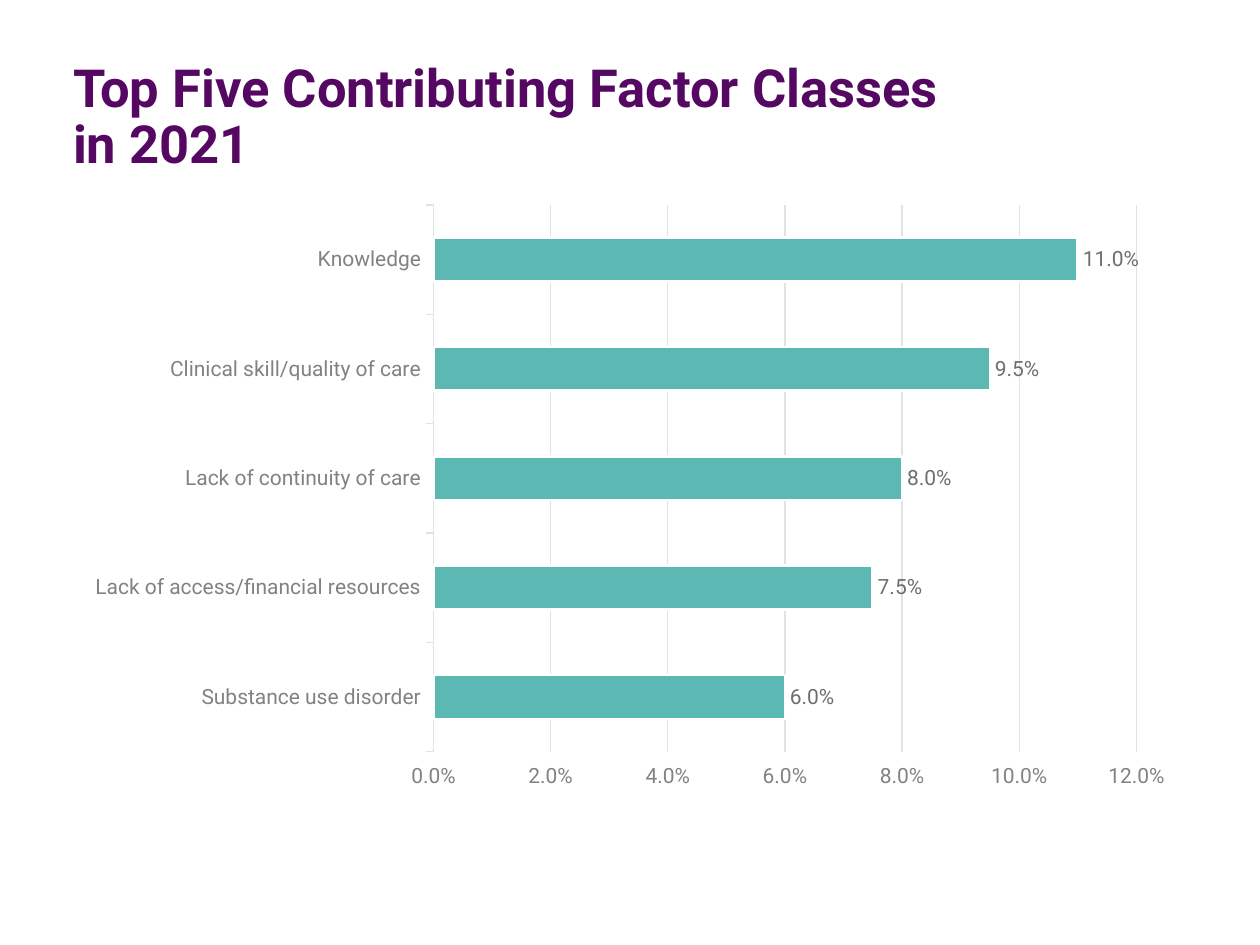
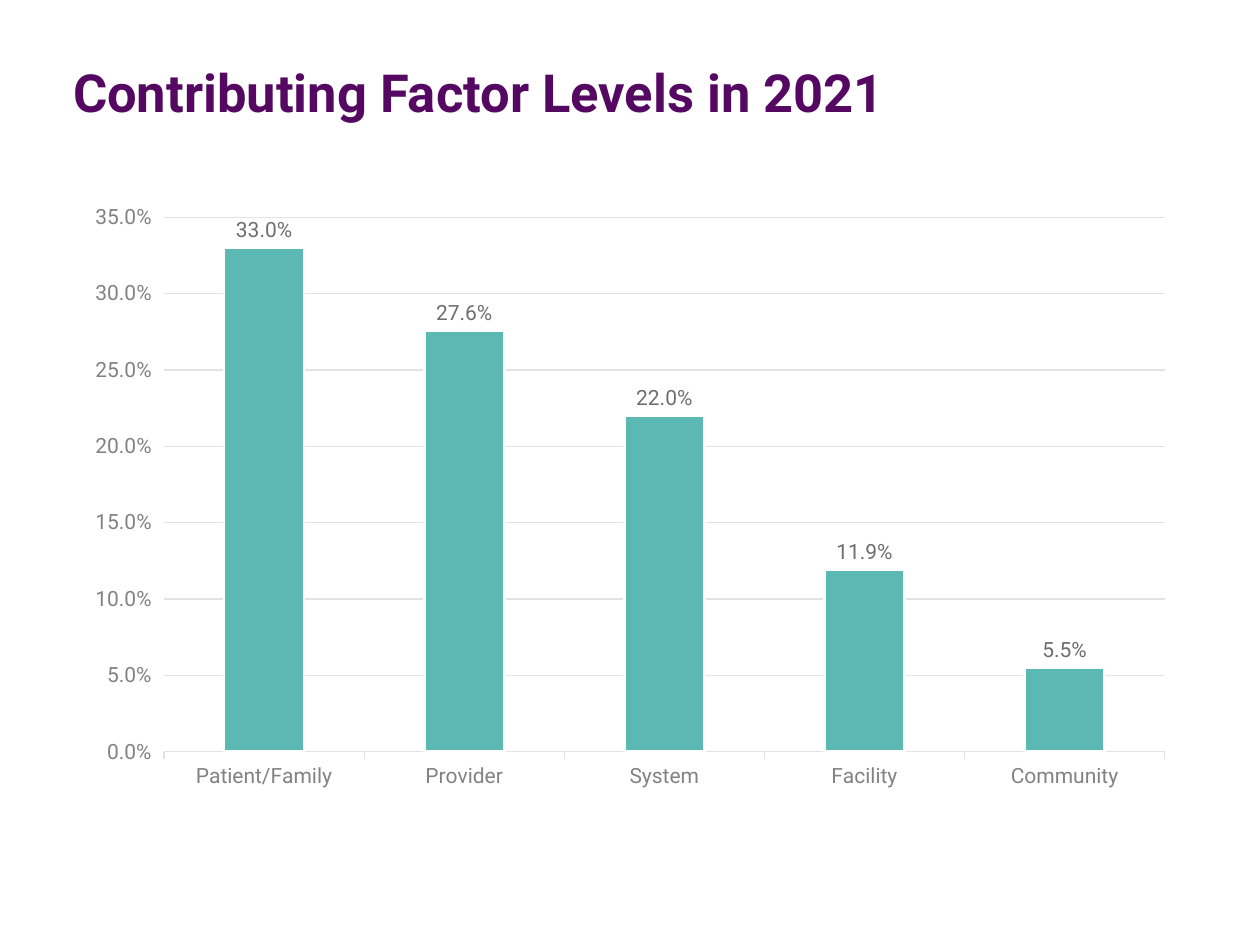
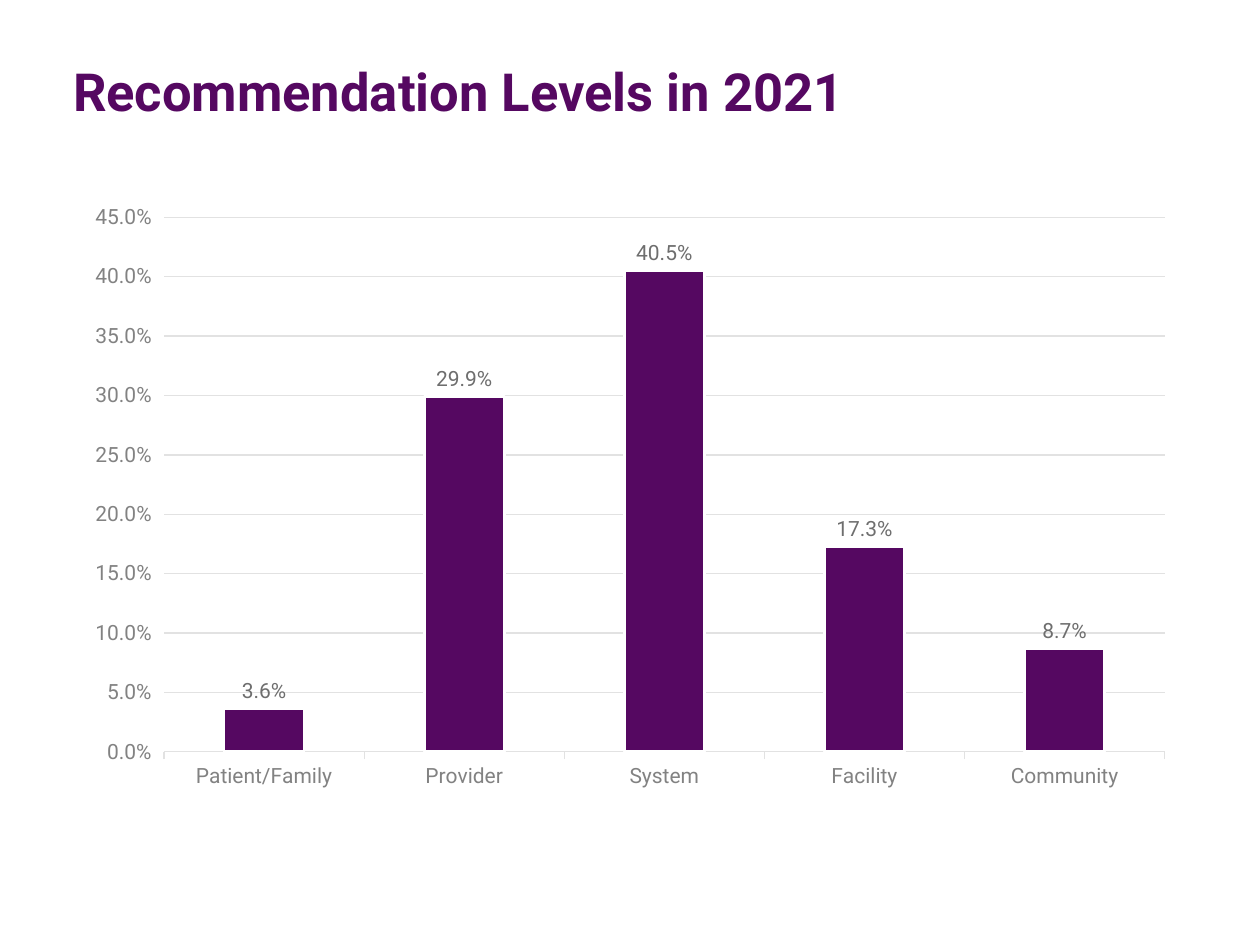
import pptx
import pptx.chart.data
import pptx.dml.color
import pptx.enum.chart
import pptx.enum.text
import pptx.util

Inches = pptx.util.Inches
Pt = pptx.util.Pt
ChartType = pptx.enum.chart.XL_CHART_TYPE

FONT = "Roboto"
COLORS = {
    "purple": "550861",
    "teal": "5CB8B2",
    "chart_text": "3E3E3E",
    "axis_text": "828282",
    "label_text": "6E6E6E",
    "grid": "E2E2E2",
    "white": "FFFFFF",
}
LEFT, TITLE_TOP, TITLE_WIDTH = 0.58, 0.35, 7.17
CHART_TOP, CHART_WIDTH, CHART_HEIGHT = 1.53, 8.84, 4.83
PERCENT = "0.0%"
LEVELS = ["Patient/Family", "Provider", "System", "Facility", "Community"]

SLIDES = [
    {
        "title": "Top Five Contributing Factor Classes in 2021",
        "title_height": 1.18,
        "type": ChartType.BAR_CLUSTERED,
        "categories": ["Substance use disorder", "Lack of access/financial resources",
                       "Lack of continuity of care", "Clinical skill/quality of care",
                       "Knowledge"],
        "values": [0.06, 0.075, 0.08, 0.095, 0.11],
        "color": "teal", "maximum": 0.12, "step": 0.02,
    },
    {
        "title": "Contributing Factor Levels in 2021",
        "title_height": 0.82,
        "type": ChartType.COLUMN_CLUSTERED,
        "categories": LEVELS,
        "values": [0.33, 0.276, 0.22, 0.119, 0.055],
        "color": "teal", "maximum": 0.35, "step": 0.05,
    },
    {
        "title": "Recommendation Levels in 2021",
        "title_height": 0.8,
        "type": ChartType.COLUMN_CLUSTERED,
        "categories": LEVELS,
        "values": [0.036, 0.299, 0.405, 0.173, 0.087],
        "color": "purple", "maximum": 0.45, "step": 0.05,
    },
]


def set_font(font, size, color, bold=False):
    font.name = FONT
    font.size = Pt(size)
    font.bold = bold
    font.color.rgb = pptx.dml.color.RGBColor.from_string(COLORS[color])


def add_text(slide, text, *, left, top, width, height, size, color, bold=False):
    """Add a wrapped, vertically centred text box flush with its left edge."""
    shape = slide.shapes.add_textbox(Inches(left), Inches(top), Inches(width), Inches(height))
    frame = shape.text_frame
    frame.word_wrap = True
    frame.vertical_anchor = pptx.enum.text.MSO_ANCHOR.MIDDLE
    frame.margin_left = 0
    frame.margin_top = frame.margin_right = frame.margin_bottom = Inches(0.1)
    paragraph = frame.paragraphs[0]
    paragraph.line_spacing = 0.9
    run = paragraph.add_run()
    run.text = text
    set_font(run.font, size, color, bold)


presentation = pptx.Presentation()
presentation.slide_width = Inches(10)
presentation.slide_height = Inches(7.5)

for content in SLIDES:
    slide = presentation.slides.add_slide(presentation.slide_layouts[6])
    add_text(slide, content["title"], left=LEFT, top=TITLE_TOP, width=TITLE_WIDTH,
             height=content["title_height"], size=30, color="purple", bold=True)

    data = pptx.chart.data.CategoryChartData(number_format=PERCENT)
    data.categories = content["categories"]
    data.add_series("Series 1", content["values"])
    chart = slide.shapes.add_chart(
        content["type"], Inches(LEFT), Inches(CHART_TOP),
        Inches(CHART_WIDTH), Inches(CHART_HEIGHT), data).chart
    chart.has_title = False
    chart.has_legend = False
    set_font(chart.font, 10, "chart_text")

    category_axis, value_axis = chart.category_axis, chart.value_axis
    for axis in (category_axis, value_axis):
        axis.major_tick_mark = pptx.enum.chart.XL_TICK_MARK.OUTSIDE
        axis.minor_tick_mark = pptx.enum.chart.XL_TICK_MARK.NONE
        set_font(axis.tick_labels.font, 12, "axis_text")
    value_axis.format.line.fill.background()
    value_axis.minimum_scale = 0
    value_axis.maximum_scale = content["maximum"]
    value_axis.major_unit = content["step"]
    value_axis.tick_labels.number_format = PERCENT
    value_axis.tick_labels.number_format_is_linked = False

    plot = chart.plots[0]
    plot.gap_width = 150
    plot.vary_by_categories = False
    series = plot.series[0]
    series.invert_if_negative = False
    series.format.fill.solid()
    series.format.fill.fore_color.rgb = pptx.dml.color.RGBColor.from_string(
        COLORS[content["color"]])

    for line, color, width in (
        (category_axis.format.line, "grid", 0.75),
        (value_axis.major_gridlines.format.line, "grid", 0.75),
        (series.format.line, "white", 1.5),
    ):
        line.color.rgb = pptx.dml.color.RGBColor.from_string(COLORS[color])
        line.width = Pt(width)

    labels = series.data_labels
    labels.show_value = True
    labels.position = pptx.enum.chart.XL_LABEL_POSITION.OUTSIDE_END
    labels.number_format = PERCENT
    labels.number_format_is_linked = False
    set_font(labels.font, 12, "label_text")

presentation.save("out.pptx")
